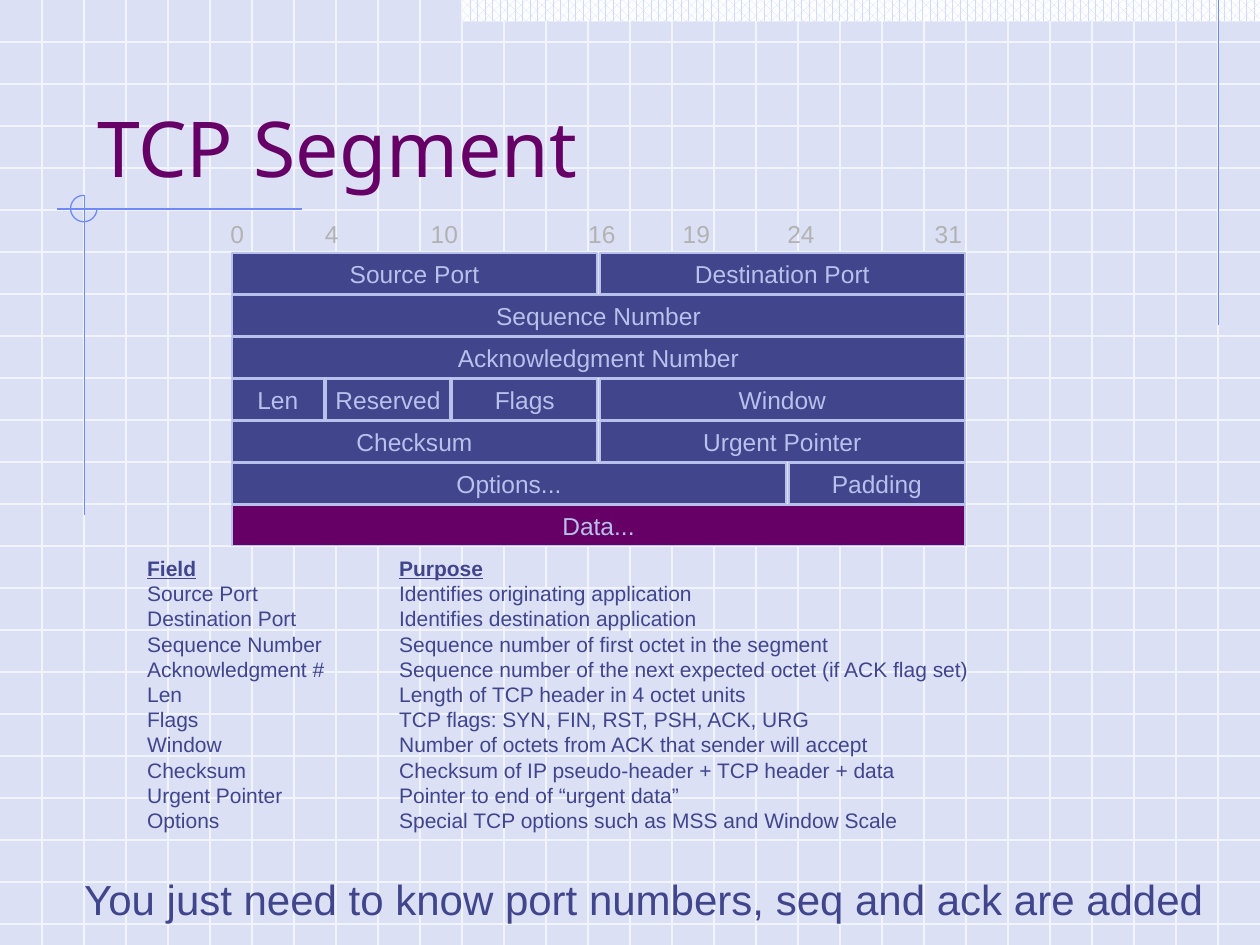
from dataclasses import dataclass

from lxml.etree import SubElement
from pptx import Presentation
from pptx.dml.color import RGBColor
from pptx.enum.dml import MSO_PATTERN
from pptx.enum.shapes import MSO_CONNECTOR, MSO_SHAPE
from pptx.enum.text import MSO_ANCHOR, MSO_AUTO_SIZE, PP_ALIGN
from pptx.oxml.ns import qn
from pptx.util import Inches, Pt


@dataclass(frozen=True)
class Theme:
    background: str = "DBE0F5"
    grid: str = "F1F4FD"
    pattern: str = "CFDBFD"
    white: str = "FFFFFF"
    accent: str = "6F89F7"
    purple: str = "660066"
    navy: str = "40458C"
    pale: str = "B7C1EB"
    gray: str = "B2B2B2"
    title_font: str = "Noto Sans"
    body_font: str = "Arial"
    title_size: int = 44
    closing_size: int = 24
    cell_size: int = 14
    legend_size: int = 12
    thin: float = 0.75


def rgb(color):
    return RGBColor.from_string(color)


class SlideBuilder:
    def __init__(self, slide, theme):
        self.slide, self.shapes, self.theme = slide, slide.shapes, theme
        background = slide.background.fill
        background.solid()
        background.fore_color.rgb = rgb(theme.background)

    def run(self, paragraph, text, size, color, font=None, strong=False):
        run = paragraph.add_run()
        run.text = text
        run.font.name = font or self.theme.body_font
        run.font.size = Pt(size)
        run.font.color.rgb = rgb(color)
        run.font.bold = run.font.underline = strong

    def title(self, text, left, top, width, height):
        title = self.shapes.title
        title.left, title.top = Inches(left), Inches(top)
        title.width, title.height = Inches(width), Inches(height)
        frame = title.text_frame
        frame.vertical_anchor = MSO_ANCHOR.BOTTOM
        frame.auto_size = MSO_AUTO_SIZE.NONE
        frame.paragraphs[0].alignment = PP_ALIGN.LEFT
        self.run(frame.paragraphs[0], text, self.theme.title_size,
                 self.theme.purple, self.theme.title_font)
        # Bring the title in front of the background grid
        self.shapes._spTree.append(title._element)

    def line(self, x1, y1, x2, y2, color):
        line = self.shapes.add_connector(
            MSO_CONNECTOR.STRAIGHT, Inches(x1), Inches(y1), Inches(x2), Inches(y2))
        line.line.color.rgb = rgb(color)
        line.line.width = Pt(self.theme.thin)
        SubElement(line._element.spPr, qn("a:effectLst"))

    def shape(self, kind, left, top, width, height):
        shape = self.shapes.add_shape(
            kind, Inches(left), Inches(top), Inches(width), Inches(height))
        shape.shadow.inherit = False
        return shape

    def pattern_band(self, left, top, width, height):
        band = self.shape(MSO_SHAPE.RECTANGLE, left, top, width, height)
        band.fill.patterned()
        band.fill.pattern = MSO_PATTERN.PERCENT_60
        band.fill.fore_color.rgb = rgb(self.theme.pattern)
        band.fill.back_color.rgb = rgb(self.theme.white)
        band.line.fill.background()

    def three_quarter_arc(self, left, top, size):
        arc = self.shape(MSO_SHAPE.ARC, left, top, size, size)
        arc.adjustments[0] = 0
        arc.adjustments[1] = 162  # 270 degrees
        arc.fill.background()
        arc.line.color.rgb = rgb(self.theme.accent)
        arc.line.width = Pt(self.theme.thin)

    def cell(self, text, left, top, width, height, color):
        cell = self.shape(MSO_SHAPE.RECTANGLE, left, top, width, height)
        cell.fill.solid()
        cell.fill.fore_color.rgb = rgb(color)
        cell.line.color.rgb = rgb(self.theme.pale)
        cell.line.width = Pt(1)
        frame = cell.text_frame
        frame.word_wrap = False
        frame.vertical_anchor = MSO_ANCHOR.MIDDLE
        frame.paragraphs[0].alignment = PP_ALIGN.CENTER
        self.run(frame.paragraphs[0], text, self.theme.cell_size, self.theme.pale)

    def text_frame(self, left, top, width, height):
        box = self.shapes.add_textbox(
            Inches(left), Inches(top), Inches(width), Inches(height))
        frame = box.text_frame
        frame.word_wrap = False
        frame.auto_size = MSO_AUTO_SIZE.SHAPE_TO_FIT_TEXT
        return frame

    def text(self, text, left, top, width, height, size, color):
        frame = self.text_frame(left, top, width, height)
        self.run(frame.paragraphs[0], text, size, color)

    def two_columns(self, rows, left, top, width, height, tab):
        frame = self.text_frame(left, top, width, height)
        for index, (field, purpose) in enumerate(rows):
            paragraph = frame.add_paragraph() if index else frame.paragraphs[0]
            tabs = SubElement(paragraph._p.get_or_add_pPr(), qn("a:tabLst"))
            SubElement(tabs, qn("a:tab"), pos=str(Inches(tab)), algn="l")
            for part in (field, "\t", purpose):
                self.run(paragraph, part, self.theme.legend_size, self.theme.navy,
                         strong=index == 0 and part != "\t")


WIDTH, HEIGHT = 10, 7.5
GRID_PER_INCH = 3
ROW_TOP, ROW_HEIGHT, GAP = 2.01, 0.32, 0.01

# Left edge of each bit position in the header diagram
BIT_EDGES = {0: 1.83, 4: 2.58, 10: 3.58, 16: 4.75, 24: 6.25, 32: 7.67}
BIT_LABELS = {0: 1.73, 4: 2.48, 10: 3.32, 16: 4.57, 19: 5.32, 24: 6.15, 31: 7.32}

# Each row lists its fields with their first bit
SEGMENT_ROWS = [
    [("Source Port", 0), ("Destination Port", 16)],
    [("Sequence Number", 0)],
    [("Acknowledgment Number", 0)],
    [("Len", 0), ("Reserved", 4), ("Flags", 10), ("Window", 16)],
    [("Checksum", 0), ("Urgent Pointer", 16)],
    [("Options...", 0), ("Padding", 24)],
    [("Data...", 0)],
]

FIELD_PURPOSES = [
    ("Field", "Purpose"),
    ("Source Port", "Identifies originating application"),
    ("Destination Port", "Identifies destination application"),
    ("Sequence Number", "Sequence number of first octet in the segment"),
    ("Acknowledgment #", "Sequence number of the next expected octet (if ACK flag set)"),
    ("Len", "Length of TCP header in 4 octet units"),
    ("Flags", "TCP flags: SYN, FIN, RST, PSH, ACK, URG"),
    ("Window", "Number of octets from ACK that sender will accept"),
    ("Checksum", "Checksum of IP pseudo-header + TCP header + data"),
    ("Urgent Pointer", "Pointer to end of “urgent data”"),
    ("Options", "Special TCP options such as MSS and Window Scale"),
]


def main():
    theme = Theme()
    deck = Presentation()
    deck.slide_width, deck.slide_height = Inches(WIDTH), Inches(HEIGHT)
    builder = SlideBuilder(deck.slides.add_slide(deck.slide_layouts[5]), theme)

    # Background grid
    for step in range(1, int(HEIGHT * GRID_PER_INCH) + 1):
        builder.line(0, step / GRID_PER_INCH, WIDTH, step / GRID_PER_INCH, theme.grid)
    for step in range(1, WIDTH * GRID_PER_INCH):
        builder.line(step / GRID_PER_INCH, 0, step / GRID_PER_INCH, HEIGHT, theme.grid)

    # Corner ornaments
    builder.pattern_band(3.67, 0, 6.33, 0.17)
    builder.line(9.67, 0, 9.67, 2.58, theme.accent)
    builder.line(2.4, 1.66, 0.45, 1.66, theme.accent)
    builder.line(0.67, 1.55, 0.67, 4.09, theme.accent)
    builder.three_quarter_arc(0.56, 1.55, 0.21)

    builder.title("TCP Segment", 0.67, 0.33, 8.5, 1.25)

    # Bit numbers above the header diagram
    for bit, left in BIT_LABELS.items():
        builder.text(str(bit), left, 1.69, 0.31 if bit < 10 else 0.42, 0.33,
                     theme.cell_size, theme.gray)

    # Header diagram
    for index, fields in enumerate(SEGMENT_ROWS):
        top = ROW_TOP + index / GRID_PER_INCH
        ends = [bit for _, bit in fields[1:]] + [32]
        for (name, start), end in zip(fields, ends):
            left = BIT_EDGES[start] + GAP
            color = theme.purple if name == "Data..." else theme.navy
            builder.cell(name, left, top, BIT_EDGES[end] - GAP - left, ROW_HEIGHT, color)

    # Field descriptions and closing remark
    builder.two_columns(FIELD_PURPOSES, 1.07, 4.36, 6.73, 2.3, tab=2)
    builder.text("You just need to know port numbers, seq and ack are added",
                 0.57, 6.88, 9.12, 0.5, theme.closing_size, theme.navy)

    deck.save("out.pptx")


if __name__ == "__main__":
    main()
